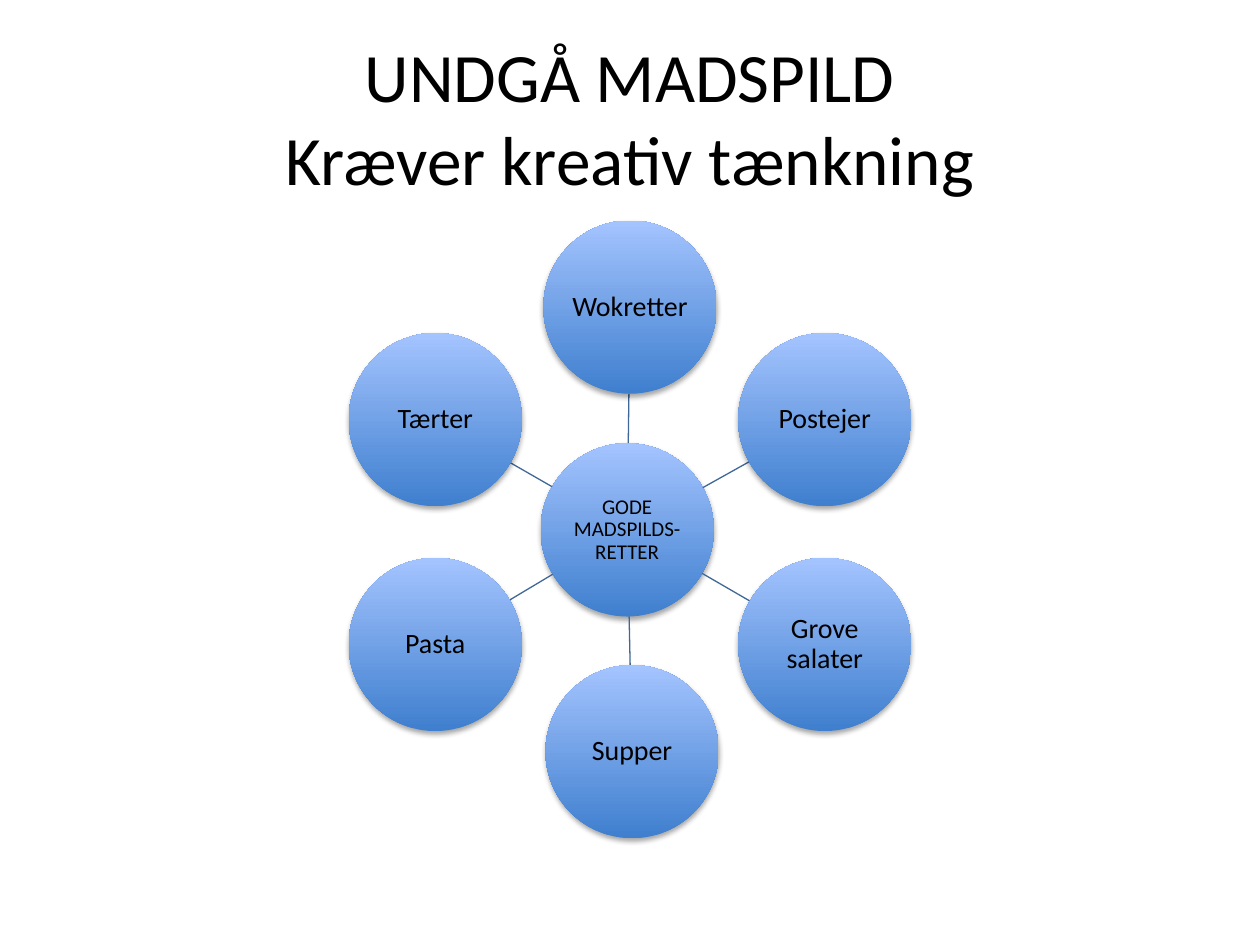
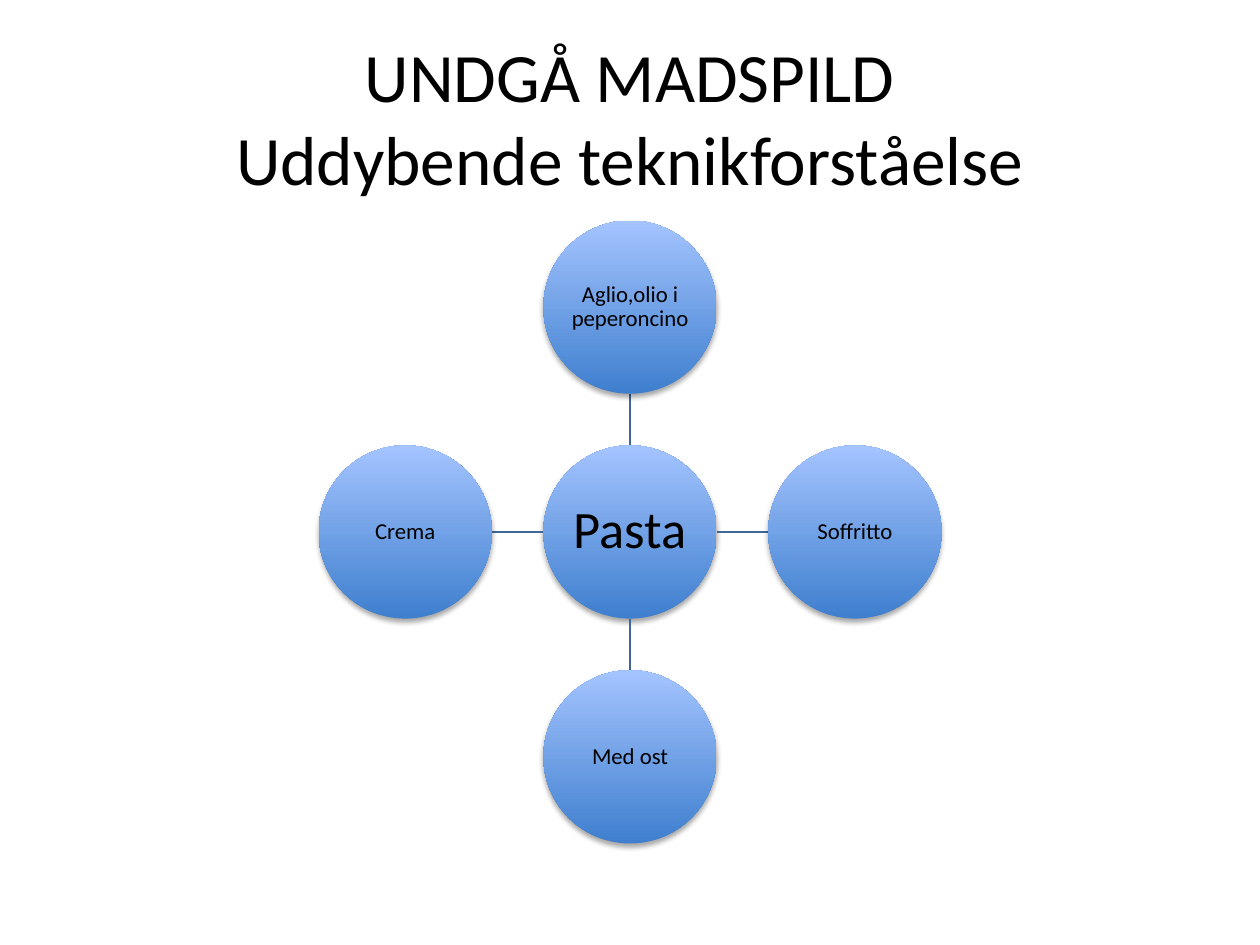
from dataclasses import dataclass
from math import cos, hypot, radians, sin

from lxml.etree import SubElement
from pptx import Presentation
from pptx.dml.color import RGBColor
from pptx.enum.shapes import MSO_CONNECTOR, MSO_SHAPE
from pptx.enum.text import MSO_ANCHOR, PP_ALIGN
from pptx.oxml.ns import qn
from pptx.slide import Slide
from pptx.text.text import TextFrame
from pptx.util import Pt

FONT = "Calibri"
BLACK = "000000"
CIRCLE_BOTTOM = "3F7FCE"
CIRCLE_TOP = "A4C4FF"
SPOKE = "3F6797"

CENTER_X, CENTER_Y = 360, 304
RING_RADIUS = 128.5
DIAMETER = 99


@dataclass(frozen=True)
class Circle:
    label: str
    size: float
    shift_x: float = 0
    shift_y: float = 0


@dataclass(frozen=True)
class Wheel:
    title: tuple[str, str]
    hub: Circle
    ring: tuple[Circle, ...]


WHEELS = (
    Wheel(
        ("UNDGÅ MADSPILD", "Kræver kreativ tænkning"),
        Circle("GODE MADSPILDS-RETTER", 12, -1.6, -1.2),
        (
            Circle("Wokretter", 16),
            Circle("Postejer", 16),
            Circle("Grove salater", 16),
            Circle("Supper", 16, 1.2, -3),
            Circle("Pasta", 16),
            Circle("Tærter", 16),
        ),
    ),
    Wheel(
        ("UNDGÅ MADSPILD", "Uddybende teknikforståelse"),
        Circle("Pasta", 30),
        (
            Circle("Aglio,olio i peperoncino", 13),
            Circle("Soffritto", 13),
            Circle("Med ost", 13),
            Circle("Crema", 13),
        ),
    ),
)


def color(value: str) -> RGBColor:
    return RGBColor.from_string(value)


def write_lines(frame: TextFrame, lines: tuple[str, ...], size: float) -> None:
    frame.word_wrap = True
    frame.vertical_anchor = MSO_ANCHOR.MIDDLE
    paragraph = frame.paragraphs[0]
    paragraph.alignment = PP_ALIGN.CENTER
    for index, line in enumerate(lines):
        if index:
            paragraph.add_line_break()
        run = paragraph.add_run()
        run.text = line
        run.font.name = FONT
        run.font.size = Pt(size)
        run.font.color.rgb = color(BLACK)


def add_title(slide: Slide, lines: tuple[str, str]) -> None:
    box = slide.shapes.add_textbox(Pt(36), Pt(21.6), Pt(648), Pt(90))
    write_lines(box.text_frame, lines, 39.6)


def add_circle(slide: Slide, circle: Circle, x: float, y: float) -> None:
    shape = slide.shapes.add_shape(
        MSO_SHAPE.OVAL,
        Pt(x - DIAMETER / 2), Pt(y - DIAMETER / 2), Pt(DIAMETER), Pt(DIAMETER),
    )
    shape.line.fill.background()
    shape.fill.gradient()
    shape.fill.gradient_angle = 90
    for stop, position, value in zip(
        shape.fill.gradient_stops, (0, 1), (CIRCLE_BOTTOM, CIRCLE_TOP)
    ):
        stop.position = position
        stop.color.rgb = color(value)
    shape.shadow.inherit = False
    effects = shape._element.spPr.find(qn("a:effectLst"))
    shadow = SubElement(
        effects, qn("a:outerShdw"),
        blurRad=str(Pt(3.1)), dist=str(Pt(1.8)), dir="5400000", rotWithShape="0",
    )
    shade = SubElement(shadow, qn("a:srgbClr"), val=BLACK)
    SubElement(shade, qn("a:alpha"), val="35000")
    frame = shape.text_frame
    frame.margin_left = frame.margin_right = Pt(0.75)
    frame.margin_top = frame.margin_bottom = Pt(0.75)
    write_lines(frame, (circle.label,), circle.size)
    frame.paragraphs[0].line_spacing = 0.9


def add_spoke(slide: Slide, hub_x: float, hub_y: float, x: float, y: float) -> None:
    distance = hypot(x - hub_x, y - hub_y)
    edge_x = (x - hub_x) / distance * DIAMETER / 2
    edge_y = (y - hub_y) / distance * DIAMETER / 2
    spoke = slide.shapes.add_connector(
        MSO_CONNECTOR.STRAIGHT,
        Pt(hub_x + edge_x), Pt(hub_y + edge_y), Pt(x - edge_x), Pt(y - edge_y),
    )
    spoke.line.color.rgb = color(SPOKE)
    spoke.line.width = Pt(0.75)
    SubElement(spoke._element.spPr, qn("a:effectLst"))


def add_wheel(slide: Slide, wheel: Wheel) -> None:
    add_title(slide, wheel.title)
    hub_x = CENTER_X + wheel.hub.shift_x
    hub_y = CENTER_Y + wheel.hub.shift_y
    add_circle(slide, wheel.hub, hub_x, hub_y)
    for index, circle in enumerate(wheel.ring):
        angle = radians(360 / len(wheel.ring) * index)
        x = CENTER_X + RING_RADIUS * sin(angle) + circle.shift_x
        y = CENTER_Y - RING_RADIUS * cos(angle) + circle.shift_y
        add_spoke(slide, hub_x, hub_y, x, y)
        add_circle(slide, circle, x, y)


def main() -> None:
    presentation = Presentation()
    presentation.slide_width = Pt(720)
    presentation.slide_height = Pt(540)
    for wheel in WHEELS:
        add_wheel(presentation.slides.add_slide(presentation.slide_layouts[6]), wheel)
    presentation.save("out.pptx")


if __name__ == "__main__":
    main()
